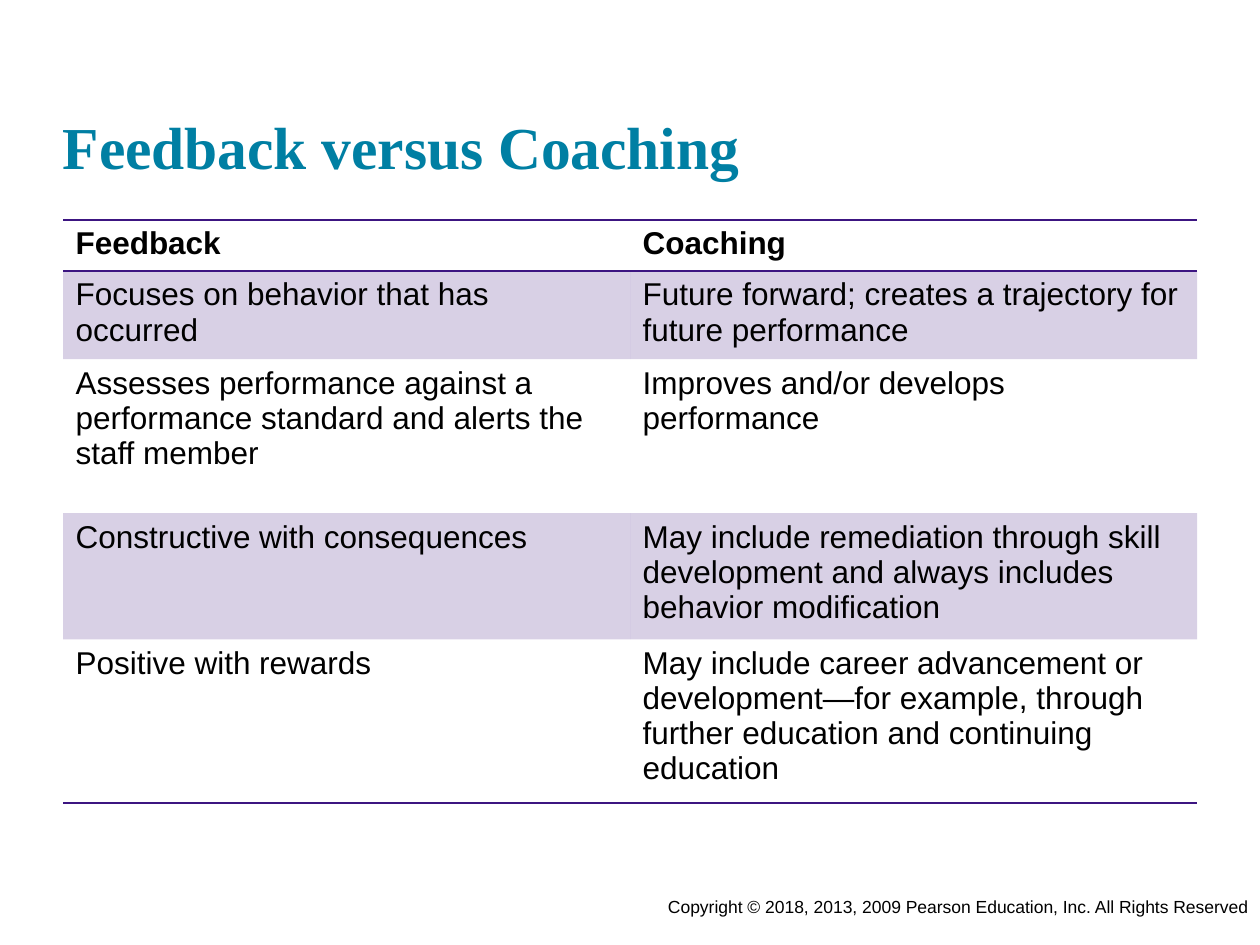
import pptx
import pptx.dml.color
import pptx.enum.text
import pptx.oxml
import pptx.oxml.ns
import pptx.util

EMU_PER_PX = 914400 / 126
COLORS = {"title": "007FA3", "text": "000000", "accent": "3C1581"}
PLAIN_STYLE = "{2D5ABB26-0587-4C30-8999-92F81FD0307C}"
ROWS = [
    ("Feedback", "Coaching"),
    ("Focuses on behavior that has occurred",
     "Future forward; creates a trajectory for future performance"),
    ("Assesses performance against a performance standard and alerts the staff member",
     "Improves and/or develops performance"),
    ("Constructive with consequences",
     "May include remediation through skill development and always includes behavior modification"),
    ("Positive with rewards",
     "May include career advancement or development—for example, through further education "
     "and continuing education"),
]
ROW_HEIGHTS = [51, 84, 154, 118, 153]


def px(length):
    return pptx.util.Emu(round(length * EMU_PER_PX))


def rgb(name):
    return pptx.dml.color.RGBColor.from_string(COLORS[name])


def write_text(frame, text, size, font="Arial", color="text", bold=False):
    frame.text = text
    span = frame.paragraphs[0].runs[0]
    span.font.size = pptx.util.Pt(size)
    span.font.name = font
    span.font.bold = bold
    span.font.color.rgb = rgb(color)


def add_text_box(page, box):
    frame = page.shapes.add_textbox(*map(px, box)).text_frame
    frame.word_wrap = True
    return frame


def add_title(page, box):
    frame = add_text_box(page, box)
    frame.margin_left = frame.margin_right = frame.margin_top = frame.margin_bottom = 0
    frame.vertical_anchor = pptx.enum.text.MSO_ANCHOR.BOTTOM
    write_text(frame, "Feedback versus Coaching", 34, "Times New Roman", "title", True)


def add_copyright(page, box):
    frame = add_text_box(page, box)
    write_text(frame, "Copyright © 2018, 2013, 2009 Pearson Education, Inc. All Rights Reserved", 10)
    frame.paragraphs[0].alignment = pptx.enum.text.PP_ALIGN.RIGHT


def add_border(properties, position, side):
    properties.insert(position, pptx.oxml.parse_xml(
        f'<a:{side} {pptx.oxml.ns.nsdecls("a")} w="12700"><a:solidFill>'
        f'<a:srgbClr val="{COLORS["accent"]}"/></a:solidFill></a:{side}>'))


def add_comparison(page, box):
    qn = pptx.oxml.ns.qn
    left, top, width, height = box
    columns = len(ROWS[0])
    graphic = page.shapes.add_table(len(ROWS), columns, *map(px, box))
    table = graphic.table
    table.first_row = table.horz_banding = False
    next(graphic.element.iter(qn("a:tableStyleId"))).text = PLAIN_STYLE
    for column in table.columns:
        column.width = px(width / columns)
    for index, (row, row_height, texts) in enumerate(zip(table.rows, ROW_HEIGHTS, ROWS)):
        row.height = px(row_height)
        for cell, text in zip(row.cells, texts):
            write_text(cell.text_frame, text, 18, bold=index == 0)
            if index % 2:
                cell.fill.solid()
                cell.fill.fore_color.rgb = rgb("accent")
            else:
                cell.fill.background()
    for color in graphic.element.iterfind(f".//{qn('a:tcPr')}/{qn('a:solidFill')}/{qn('a:srgbClr')}"):
        color.append(pptx.oxml.parse_xml(f'<a:alpha {pptx.oxml.ns.nsdecls("a")} val="20000"/>'))
    cells = list(graphic.element.iter(qn("a:tcPr")))
    for properties in cells[:columns]:
        add_border(properties, 0, "lnT")
        add_border(properties, 1, "lnB")
    for properties in cells[-columns:]:
        add_border(properties, 0, "lnB")


def main():
    deck = pptx.Presentation()
    deck.slide_width, deck.slide_height = px(1260), px(945)
    page = deck.slides.add_slide(deck.slide_layouts[6])
    add_copyright(page, (273, 890, 987, 34))
    add_title(page, (63, 30, 1134, 151))
    add_comparison(page, (63, 220, 1134, sum(ROW_HEIGHTS)))
    deck.save("out.pptx")


if __name__ == "__main__":
    main()
